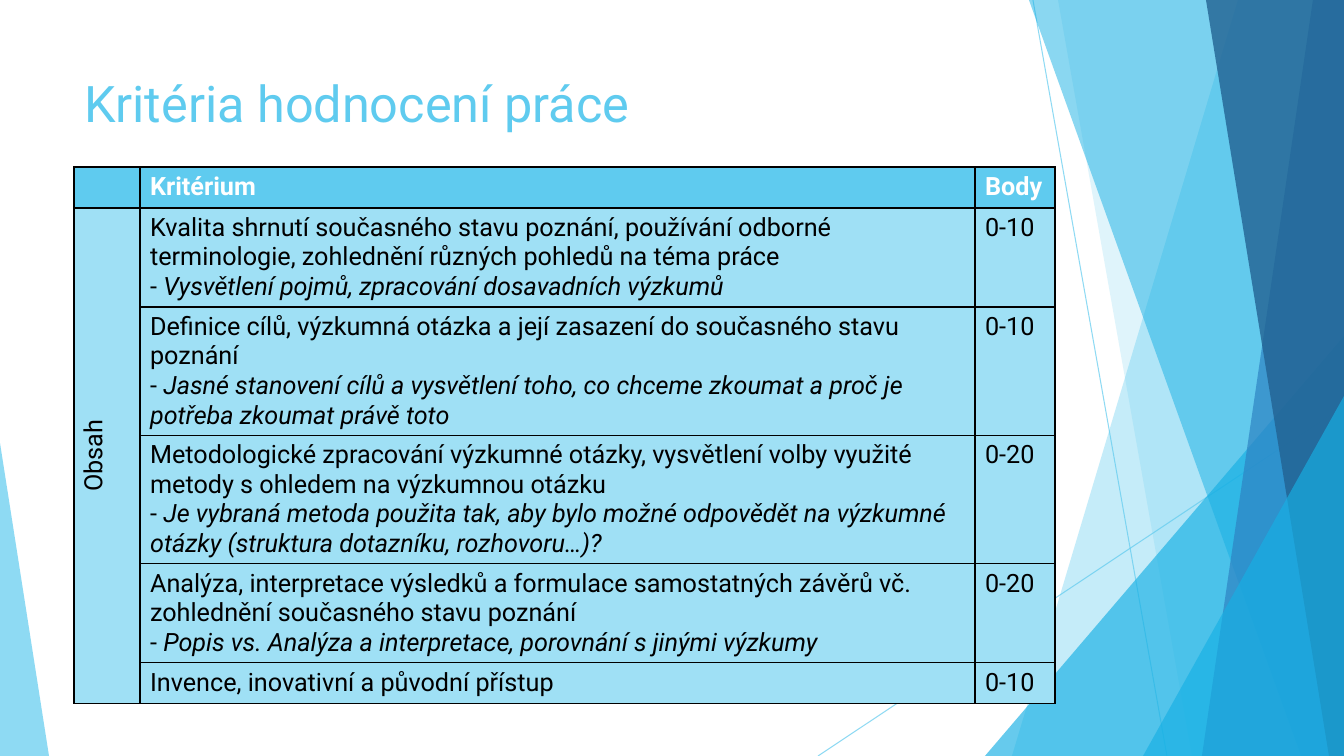
"""Build the slide with the thesis grading criteria table."""
from lxml.etree import SubElement
from pptx import Presentation
from pptx.dml.color import RGBColor as RGB
from pptx.enum.shapes import MSO_CONNECTOR as Conn, MSO_SHAPE as Shape
from pptx.enum.text import MSO_ANCHOR as Anchor, MSO_AUTO_SIZE as Fit, PP_ALIGN as Align
from pptx.oxml import parse_xml
from pptx.oxml.ns import nsdecls, qn
from pptx.util import Pt

TITLE = "Kritéria hodnocení práce"
HEAD = ("", "Kritérium", "Body")
GROUP = "Obsah"
ROWS = [
    ("Kvalita shrnutí současného stavu poznání, používání odborné terminologie, "
     "zohlednění různých pohledů na téma práce",
     "Vysvětlení pojmů, zpracování dosavadních výzkumů", "0-10"),
    ("Definice cílů, výzkumná otázka a její zasazení do současného stavu poznání",
     "Jasné stanovení cílů a vysvětlení toho, co chceme zkoumat a proč je potřeba "
     "zkoumat právě toto", "0-10"),
    ("Metodologické zpracování výzkumné otázky, vysvětlení volby využité metody "
     "s ohledem na výzkumnou otázku",
     "Je vybraná metoda použita tak, aby bylo možné odpovědět na výzkumné otázky "
     "(struktura dotazníku, rozhovoru…)?", "0-20"),
    ("Analýza, interpretace výsledků a formulace samostatných závěrů vč. "
     "zohlednění současného stavu poznání",
     "Popis vs. Analýza a interpretace, porovnání s jinými výzkumy", "0-20"),
    ("Invence, inovativní a původní přístup", "", "0-10"),
]

FONT = "Roboto"
SKY, CYAN = RGB(0x5F, 0xCB, 0xEF), RGB(0x17, 0xB0, 0xE4)
BLUE, NAVY = RGB(0x2E, 0x83, 0xC3), RGB(0x22, 0x62, 0x92)
PALE, BLACK, WHITE = RGB(0x9F, 0xE0, 0xF5), RGB(0, 0, 0), RGB(255, 255, 255)

WIDE, HIGH = 1344, 756
SCALE = 12192000 / WIDE
LEFT, TOP = 74, 167
COLS = (66, 835, 80)
TALL = (41, 99, 128, 128, 99, 41)
LINES = [(1033, 0, 1167, HIGH), (WIDE, 406, 818, HIGH)]


def px(*nums):
    """Turn pixel lengths into EMU."""
    return [round(n * SCALE) for n in nums]


def slab(tree, top, base):
    """Draw a full-height band from a slanted left edge to the right side."""
    pen = tree.build_freeform(top, 0, scale=SCALE)
    pen.add_line_segments([(WIDE, 0), (WIDE, HIGH), (base, HIGH)], close=True)
    return pen.convert_to_shape()


def wedge(tree, x, y, wide, apex):
    """Draw a right triangle that stands on the bottom edge."""
    tri = tree.add_shape(Shape.ISOSCELES_TRIANGLE, *px(x, y, wide, HIGH - y))
    tri.adjustments[0] = apex
    return tri


FACETS = [
    (slab, (1238, 1012), SKY, 36),
    (slab, (1058, 1192), SKY, 20),
    (wedge, (985, 336, 359, 1), CYAN, 66),
    (slab, (1029, 1301), CYAN, 50),
    (slab, (1313, 1202), BLUE, 70),
    (slab, (1206, 1329), NAVY, 80),
    (wedge, (1143, 396, 201, 1), CYAN, 66),
    (wedge, (0, 443, 49, 0), SKY, 70),
]


def fade(fill, color, alpha):
    """Set a solid colour with the given opacity in percent."""
    fill.solid()
    fill.fore_color.rgb = color
    node = fill._xPr.find(qn("a:solidFill"))[0]
    SubElement(node, qn("a:alpha")).set("val", str(alpha * 1000))


def backdrop(tree):
    """Draw the thin lines and the translucent facets."""
    for ends in LINES:
        line = tree.add_connector(Conn.STRAIGHT, *px(*ends))
        line.line.width = Pt(0.75)
        fade(line.line.fill, SKY, 70)
        SubElement(line._element.spPr, qn("a:effectLst"))
    for draw, args, color, alpha in FACETS:
        facet = draw(tree, *args)
        facet.shadow.inherit = False
        facet.line.fill.background()
        fade(facet.fill, color, alpha)


def style(para, size, color, bold=False):
    """Set the font of a whole paragraph."""
    font = para.font
    font.name, font.size, font.bold = FONT, Pt(size), bold
    font.color.rgb = color


def border(cell):
    """Give a cell a thin black line on each side."""
    props = cell._tc.get_or_add_tcPr()
    for spot, side in enumerate("LRTB"):
        props.insert(spot, parse_xml(
            f'<a:ln{side} {nsdecls("a")} w="12700"><a:solidFill>'
            f'<a:srgbClr val="{BLACK}"/></a:solidFill></a:ln{side}>'))


def grid(tree):
    """Add the criteria table."""
    frame = tree.add_table(len(TALL), len(COLS), *px(LEFT, TOP, sum(COLS), sum(TALL)))
    table = frame.table
    for col, wide in zip(table.columns, px(*COLS)):
        col.width = wide
    for row, tall in zip(table.rows, px(*TALL)):
        row.height = tall
    for spot, text in enumerate(HEAD):
        table.cell(0, spot).text = text
    for num, (text, note, score) in enumerate(ROWS, 1):
        cell = table.cell(num, 1)
        cell.text = text
        if note:
            para = cell.text_frame.add_paragraph()
            para.add_run().text = "- "
            run = para.add_run()
            run.text, run.font.italic = note, True
        table.cell(num, 2).text = score
    side = table.cell(1, 0)
    side.merge(table.cell(len(ROWS), 0))
    side.text = GROUP
    side.text_frame.paragraphs[0].alignment = Align.CENTER
    side._tc.get_or_add_tcPr().set("vert", "vert270")
    for num, row in enumerate(table.rows):
        for cell in row.cells:
            cell.fill.solid()
            cell.fill.fore_color.rgb = PALE if num else SKY
            border(cell)
            for para in cell.text_frame.paragraphs:
                style(para, 18, BLACK if num else WHITE, not num)


def main():
    """Build and save the slide."""
    deck = Presentation()
    deck.slide_width, deck.slide_height = px(WIDE, HIGH)
    slide = deck.slides.add_slide(deck.slide_layouts[5])
    title = slide.shapes.title
    title.left, title.top, title.width, title.height = px(LEFT, 67, 948, 146)
    title.text = TITLE
    title.text_frame.auto_size = Fit.NONE
    title.text_frame.vertical_anchor = Anchor.TOP
    para = title.text_frame.paragraphs[0]
    para.alignment = Align.LEFT
    style(para, 36, SKY)
    backdrop(slide.shapes)
    grid(slide.shapes)
    deck.save("out.pptx")


if __name__ == "__main__":
    main()
